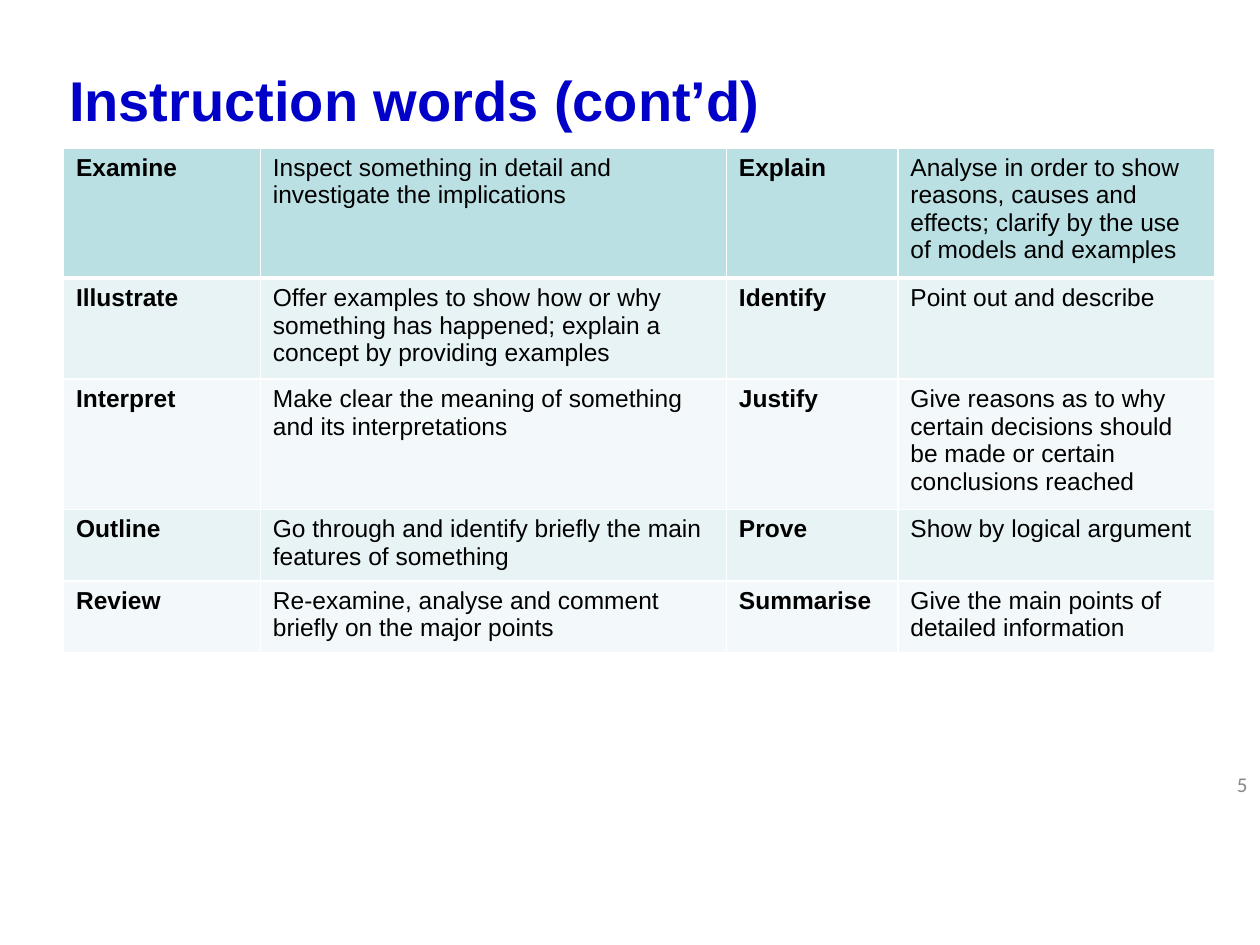
import lxml.etree
import pptx
import pptx.dml.color
import pptx.enum.text
import pptx.oxml.ns
import pptx.util

Cm, Pt = pptx.util.Cm, pptx.util.Pt
RGBColor = pptx.dml.color.RGBColor
MSO_ANCHOR, PP_ALIGN = pptx.enum.text.MSO_ANCHOR, pptx.enum.text.PP_ALIGN
qn = pptx.oxml.ns.qn

BLUE = RGBColor(0x00, 0x00, 0xC8)
BLACK = RGBColor(0x00, 0x00, 0x00)
GREY = RGBColor(0x89, 0x89, 0x89)
WHITE = RGBColor(0xFF, 0xFF, 0xFF)
TEAL = RGBColor(0xBB, 0xE0, 0xE3)
BANDS = RGBColor(0xE7, 0xF3, 0xF4), RGBColor(0xF3, 0xF9, 0xFA)

COLUMN_SHARES = 0.171, 0.405, 0.149, 0.275
ROW_HEIGHT = 1.04
WORDS = [
    ("Examine", "Inspect something in detail and investigate the implications",
     "Explain", "Analyse in order to show reasons, causes and effects; "
     "clarify by the use of models and examples"),
    ("Illustrate", "Offer examples to show how or why something has happened; "
     "explain a concept by providing examples",
     "Identify", "Point out and describe"),
    ("Interpret", "Make clear the meaning of something and its interpretations",
     "Justify", "Give reasons as to why certain decisions should be made "
     "or certain conclusions reached"),
    ("Outline", "Go through and identify briefly the main features of something",
     "Prove", "Show by logical argument"),
    ("Review", "Re-examine, analyse and comment briefly on the major points",
     "Summarise", "Give the main points of detailed information"),
]


def format_text(tf, font, size, color, bold=False, align=PP_ALIGN.LEFT):
    """Format every run of a text frame."""
    for p in tf.paragraphs:
        p.alignment = align
        for r in p.runs:
            r.font.name = font
            r.font.size = Pt(size)
            r.font.bold = bold
            r.font.color.rgb = color


def set_borders(cell, bottom_width):
    """Give a cell white borders, with its own width at the bottom."""
    tcPr = cell._tc.get_or_add_tcPr()
    widths = {"a:lnL": 1, "a:lnR": 1, "a:lnT": 1, "a:lnB": bottom_width}
    for i, (side, width) in enumerate(widths.items()):
        ln = lxml.etree.Element(qn(side), w=str(Pt(width)))
        fill = lxml.etree.SubElement(ln, qn("a:solidFill"))
        lxml.etree.SubElement(fill, qn("a:srgbClr"), val=str(WHITE))
        tcPr.insert(i, ln)


def place_title(s, x, y, w, h):
    """Place the slide title in the given box."""
    sp = s.shapes.title
    sp.left, sp.top, sp.width, sp.height = Cm(x), Cm(y), Cm(w), Cm(h)
    tf = sp.text_frame
    tf.text = "Instruction words (cont’d)"
    tf.vertical_anchor = MSO_ANCHOR.TOP
    format_text(tf, "Arial", 32, BLUE, bold=True)


def add_word_table(s, x, y, w):
    """Add the table of instruction words and their meanings."""
    table = s.shapes.add_table(
        len(WORDS), len(COLUMN_SHARES), Cm(x), Cm(y), Cm(w), Cm(ROW_HEIGHT * len(WORDS))
    ).table
    for column, share in zip(table.columns, COLUMN_SHARES):
        column.width = Cm(w * share)
    for i, row in enumerate(WORDS):
        for j, text in enumerate(row):
            cell = table.cell(i, j)
            cell.text = text
            format_text(cell.text_frame, "Arial", 14, BLACK, bold=j % 2 == 0)
            cell.fill.solid()
            cell.fill.fore_color.rgb = BANDS[(i - 1) % 2] if i else TEAL
            set_borders(cell, 1 if i else 3)


def add_slide_number(s, x, y, w, h):
    """Add the slide number at the right of the given box."""
    tf = s.shapes.add_textbox(Cm(x), Cm(y), Cm(w), Cm(h)).text_frame
    tf.word_wrap = True
    tf.vertical_anchor = MSO_ANCHOR.MIDDLE
    tf.text = "5"
    format_text(tf, "Calibri", 12, GREY, align=PP_ALIGN.RIGHT)


def main():
    """Build the slide and save it."""
    prs = pptx.Presentation()
    prs.slide_width, prs.slide_height = Cm(25.4), Cm(19.05)
    s = prs.slides.add_slide(prs.slide_layouts[5])
    place_title(s, 1.14, 1.19, 22.94, 1.8)
    add_slide_number(s, 19.48, 15.29, 5.92, 1.02)
    add_word_table(s, 1.28, 2.98, 23.2)
    prs.save("out.pptx")


if __name__ == "__main__":
    main()
